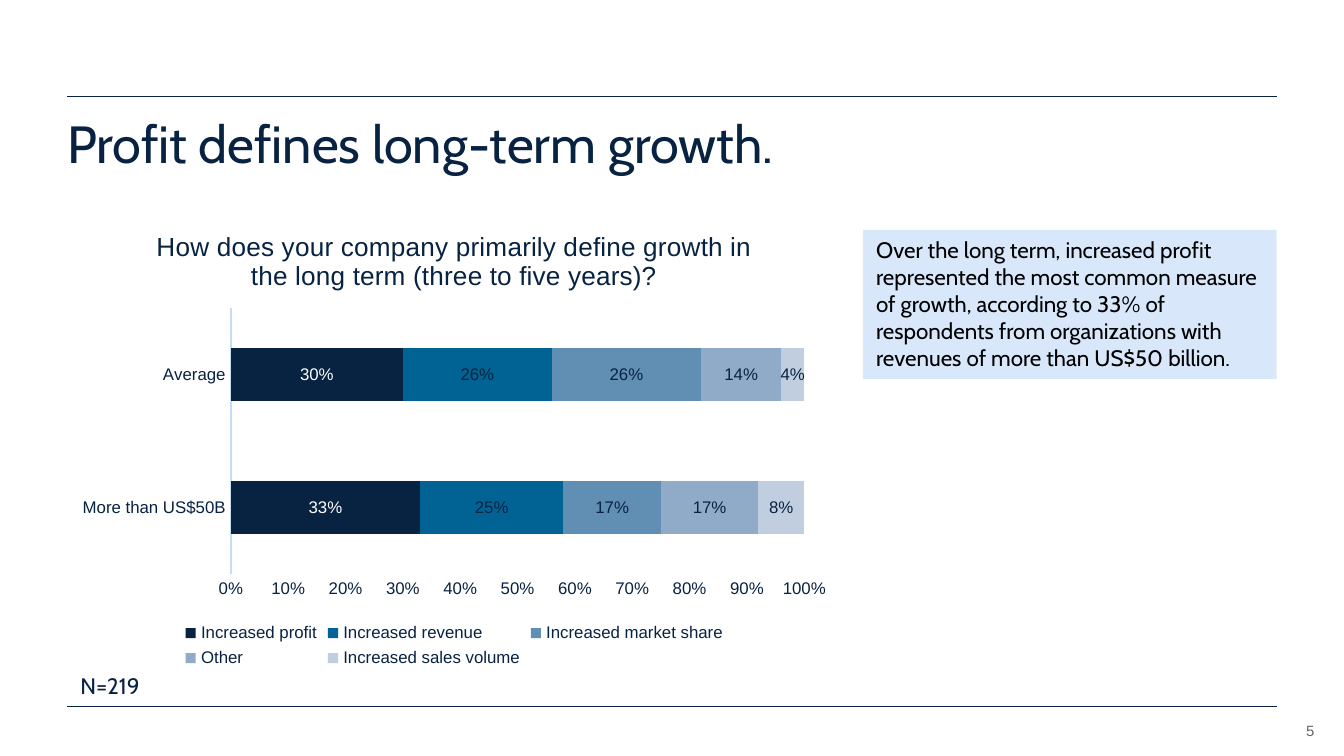
"""Builds a slide with a stacked bar chart on how companies define long-term growth."""
from lxml import etree
from pptx import Presentation
from pptx.chart.data import CategoryChartData
from pptx.dml.color import RGBColor
from pptx.enum.chart import XL_CHART_TYPE, XL_LABEL_POSITION, XL_LEGEND_POSITION, XL_TICK_MARK
from pptx.enum.shapes import MSO_CONNECTOR, MSO_SHAPE
from pptx.enum.text import MSO_ANCHOR, PP_ALIGN
from pptx.oxml.ns import qn
from pptx.util import Inches, Pt

BAR = XL_CHART_TYPE.BAR_STACKED_100
CENTER, BOTTOM = XL_LABEL_POSITION.CENTER, XL_LEGEND_POSITION.BOTTOM
NO_TICK = XL_TICK_MARK.NONE
STRAIGHT, RECTANGLE = MSO_CONNECTOR.STRAIGHT, MSO_SHAPE.RECTANGLE
ANCHOR_TOP, ANCHOR_BOTTOM = MSO_ANCHOR.TOP, MSO_ANCHOR.BOTTOM
LEFT, RIGHT = PP_ALIGN.LEFT, PP_ALIGN.RIGHT

HEADLINE = "Profit defines long-term growth."
FINDING = (
    "Over the long term, increased profit represented the most common measure "
    "of growth, according to 33% of respondents from organizations with "
    "revenues of more than US$50 billion."
)
SAMPLE = "N=219"
PAGE = "5"
QUESTION = "How does your company primarily define growth in the long term (three to five years)?"
GROUPS = ["More than US$50B", "Average"]
MEASURES = [
    ("Increased profit", (0.33, 0.30), "082241", "FFFFFF"),
    ("Increased revenue", (0.25, 0.26), "006393", "082241"),
    ("Increased market share", (0.17, 0.26), "618EB3", "082241"),
    ("Other", (0.17, 0.14), "8FABC8", "082241"),
    ("Increased sales volume", (0.08, 0.04), "C1CEDF", "082241"),
]

THEME = {
    "navy": "082241", "black": "000000", "gray": "666666",
    "panel": "D8E8FA", "axis": "C5DCF8",
    "display": "Cabin", "body": "Arial",
    "headline": 28, "question": 14, "text": 12, "chart": 10, "label": 9, "page": 8,
}

WIDTH, MARGIN = 10, 0.5
HEIGHT = WIDTH * 9 / 16
CONTENT = WIDTH - 2 * MARGIN
RULES = (0.72, 5.26)
FINDING_WIDTH = 3.08
FINDING_LEFT = WIDTH - MARGIN - FINDING_WIDTH


def color(value):
    return RGBColor.from_string(value)


def style(font, family, size, shade):
    font.name, font.size, font.bold = family, Pt(size), False
    font.color.rgb = color(shade)


def write(shape, text, family, size, shade, align=LEFT, anchor=ANCHOR_TOP, inset=True):
    frame = shape.text_frame
    frame.word_wrap = True
    frame.vertical_anchor = anchor
    if not inset:
        frame.margin_left = frame.margin_right = frame.margin_top = frame.margin_bottom = 0
    paragraph = frame.paragraphs[0]
    paragraph.text, paragraph.alignment = text, align
    style(paragraph.font, family, size, shade)
    return paragraph


def add_text(slide, box, *args, **kwargs):
    return write(slide.shapes.add_textbox(*map(Inches, box)), *args, **kwargs)


def add_rule(slide, y):
    ends = map(Inches, (MARGIN, y, WIDTH - MARGIN, y))
    rule = slide.shapes.add_connector(STRAIGHT, *ends)
    rule.line.color.rgb = color(THEME["navy"])
    rule.line.width = Pt(0.5)
    etree.SubElement(rule._element.spPr, qn("a:effectLst"))


def add_finding(slide):
    box = map(Inches, (FINDING_LEFT, 1.71, FINDING_WIDTH, 1.11))
    panel = slide.shapes.add_shape(RECTANGLE, *box)
    panel.shadow.inherit = False
    panel.fill.solid()
    panel.fill.fore_color.rgb = color(THEME["panel"])
    panel.line.fill.background()
    write(panel, FINDING, THEME["display"], THEME["text"], THEME["black"])


def add_growth_chart(slide):
    data = CategoryChartData(number_format="0%")
    data.categories = GROUPS
    for name, shares, _, _ in MEASURES:
        data.add_series(name, shares)
    box = map(Inches, (MARGIN, 1.55, 5.76, 3.46))
    chart = slide.shapes.add_chart(BAR, *box, data).chart
    body, label, navy = THEME["body"], THEME["label"], THEME["navy"]
    style(chart.font, body, THEME["chart"], navy)

    chart.has_title = True
    question = chart.chart_title.text_frame.paragraphs[0]
    question.text = QUESTION
    style(question.font, body, THEME["question"], navy)
    chart.chart_title.include_in_layout = False

    chart.has_legend = True
    chart.legend.position = BOTTOM
    chart.legend.include_in_layout = False
    style(chart.legend.font, body, label, navy)

    for axis in (chart.category_axis, chart.value_axis):
        axis.major_tick_mark = axis.minor_tick_mark = NO_TICK
        axis.has_major_gridlines = False
        style(axis.tick_labels.font, body, label, navy)
    chart.category_axis.format.line.color.rgb = color(THEME["axis"])
    chart.category_axis.format.line.width = Pt(0.75)
    chart.value_axis.format.line.fill.background()
    chart.value_axis.tick_labels.number_format = "0%"
    chart.value_axis.tick_labels.number_format_is_linked = False

    plot = chart.plots[0]
    plot.gap_width, plot.overlap = 150, 100
    plot.vary_by_categories = False
    for series, (_, _, fill, ink) in zip(plot.series, MEASURES):
        series.format.fill.solid()
        series.format.fill.fore_color.rgb = color(fill)
        labels = series.data_labels
        labels.show_value, labels.position = True, CENTER
        labels.number_format, labels.number_format_is_linked = "0%", False
        style(labels.font, body, label, ink)


def main():
    deck = Presentation()
    deck.slide_width, deck.slide_height = Inches(WIDTH), Inches(HEIGHT)
    slide = deck.slides.add_slide(deck.slide_layouts[6])
    for y in RULES:
        add_rule(slide, y)
    add_text(slide, (9.31, 5.32, 0.47, 0.18), PAGE, THEME["body"], THEME["page"],
             THEME["gray"], align=RIGHT, anchor=ANCHOR_BOTTOM, inset=False)
    headline = add_text(slide, (MARGIN, 0.88, CONTENT, 0.55), HEADLINE, THEME["display"],
                        THEME["headline"], THEME["navy"], inset=False)
    headline.line_spacing = 0.9
    add_finding(slide)
    add_growth_chart(slide)
    add_text(slide, (MARGIN, 4.95, 0.88, 0.3), SAMPLE, THEME["display"],
             THEME["text"], THEME["navy"])
    deck.save("out.pptx")


if __name__ == "__main__":
    main()
